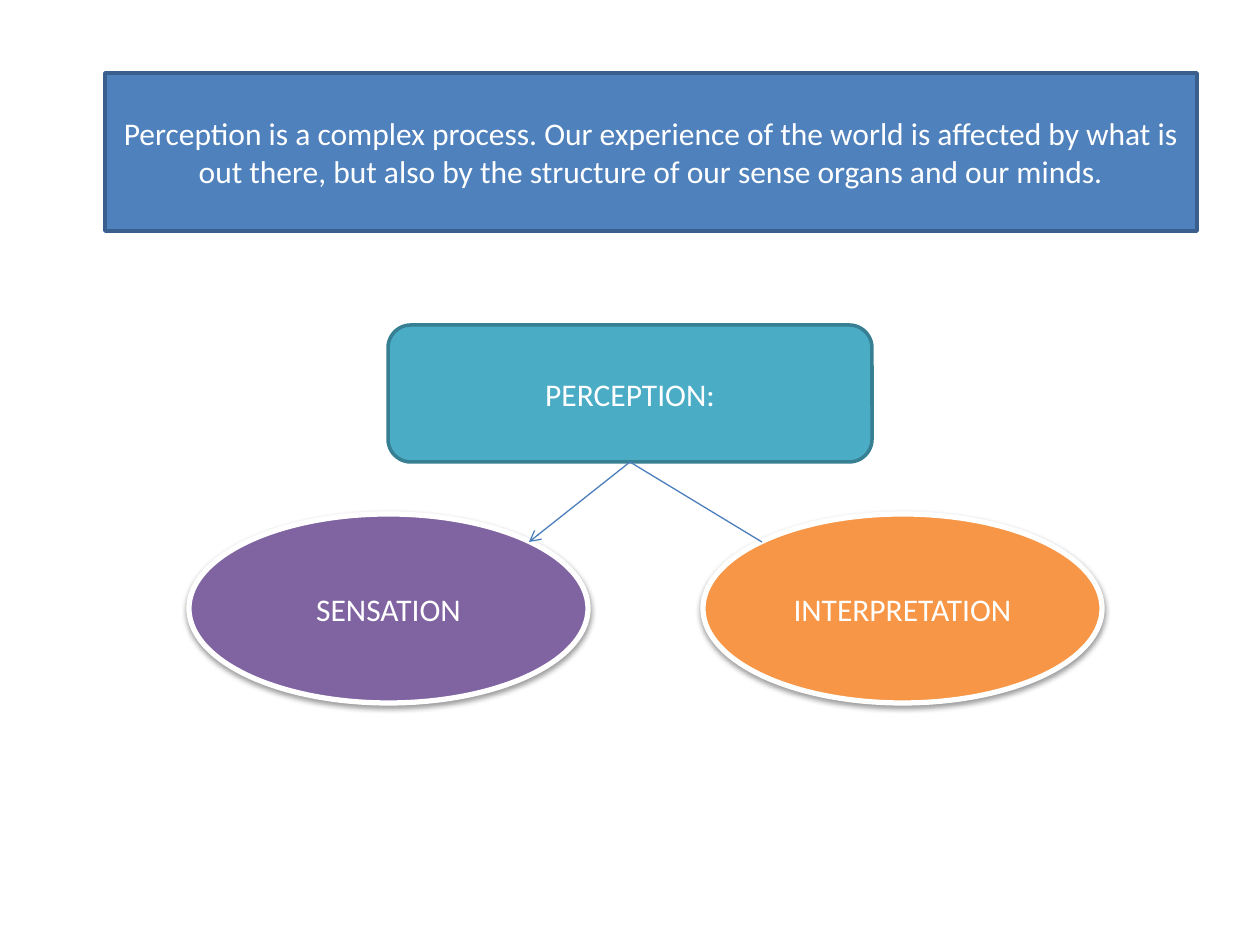
from lxml.etree import SubElement
from pptx import Presentation
from pptx.dml.color import RGBColor
from pptx.enum.shapes import MSO_CONNECTOR, MSO_SHAPE
from pptx.enum.text import MSO_ANCHOR, PP_ALIGN
from pptx.oxml.ns import qn
from pptx.util import Emu, Pt

COLORS = {
    "blue": "4F81BD", "blue edge": "3A5F8C",
    "teal": "4BACC6", "teal edge": "377F92",
    "purple": "8064A2", "orange": "F79646",
    "white": "FFFFFF", "arrow": "4B7EBC", "shadow": "000000",
}


def px(value):
    return Emu(round(value * 914400 / 126))


def color(name):
    return RGBColor.from_string(COLORS[name])


presentation = Presentation()
presentation.slide_width, presentation.slide_height = px(1260), px(945)
slide = presentation.slides.add_slide(presentation.slide_layouts[6])

# Statement, two ellipses and the central concept, back to front
RECT, OVAL, ROUNDED = MSO_SHAPE.RECTANGLE, MSO_SHAPE.OVAL, MSO_SHAPE.ROUNDED_RECTANGLE
statement = ("Perception is a complex process. Our experience of the world is affected by "
             "what is out there, but also by the structure of our sense organs and our minds.")
boxes = [
    (RECT, (105, 73, 1092, 158), "blue", "blue edge", 2, statement),
    (OVAL, (189, 514, 399, 189), "purple", "white", 3, "SENSATION"),
    (OVAL, (703, 514, 399, 189), "orange", "white", 3, "INTERPRETATION"),
    (ROUNDED, (388, 325, 484, 137), "teal", "teal edge", 2, "PERCEPTION:"),
]
shapes = {}
for kind, bounds, fill, edge, width, text in boxes:
    shape = slide.shapes.add_shape(kind, *map(px, bounds))
    shapes[text] = shape
    shape.fill.solid()
    shape.fill.fore_color.rgb = color(fill)
    shape.line.color.rgb = color(edge)
    shape.line.width = Pt(width)
    shape.shadow.inherit = False

    # Soft shadow straight below the ellipses
    if kind == OVAL:
        effects = shape._element.spPr.find(qn("a:effectLst"))
        shadow = SubElement(effects, qn("a:outerShdw"), blurRad=str(Pt(3.1)),
                            dist=str(Pt(1.6)), dir="5400000", rotWithShape="0")
        tint = SubElement(shadow, qn("a:srgbClr"), val=COLORS["shadow"])
        SubElement(tint, qn("a:alpha"), val="38000")

    frame = shape.text_frame
    frame.word_wrap = True
    frame.vertical_anchor = MSO_ANCHOR.MIDDLE
    paragraph = frame.paragraphs[0]
    paragraph.alignment = PP_ALIGN.CENTER
    run = paragraph.add_run()
    run.text = text
    run.font.name = "Calibri"
    run.font.size = Pt(18)
    run.font.color.rgb = color("white")

# Branches from the concept to the ellipses; only the left one has an arrowhead
for end_x, has_arrow in [(529, True), (762, False)]:
    branch = slide.shapes.add_connector(
        MSO_CONNECTOR.STRAIGHT, px(630), px(462), px(end_x), px(542))
    branch.begin_connect(shapes["PERCEPTION:"], 2)
    branch.line.color.rgb = color("arrow")
    branch.line.width = Pt(0.75)
    if has_arrow:
        SubElement(branch.line._get_or_add_ln(), qn("a:tailEnd"), type="arrow")
    SubElement(branch._element.spPr, qn("a:effectLst"))

presentation.save("out.pptx")
